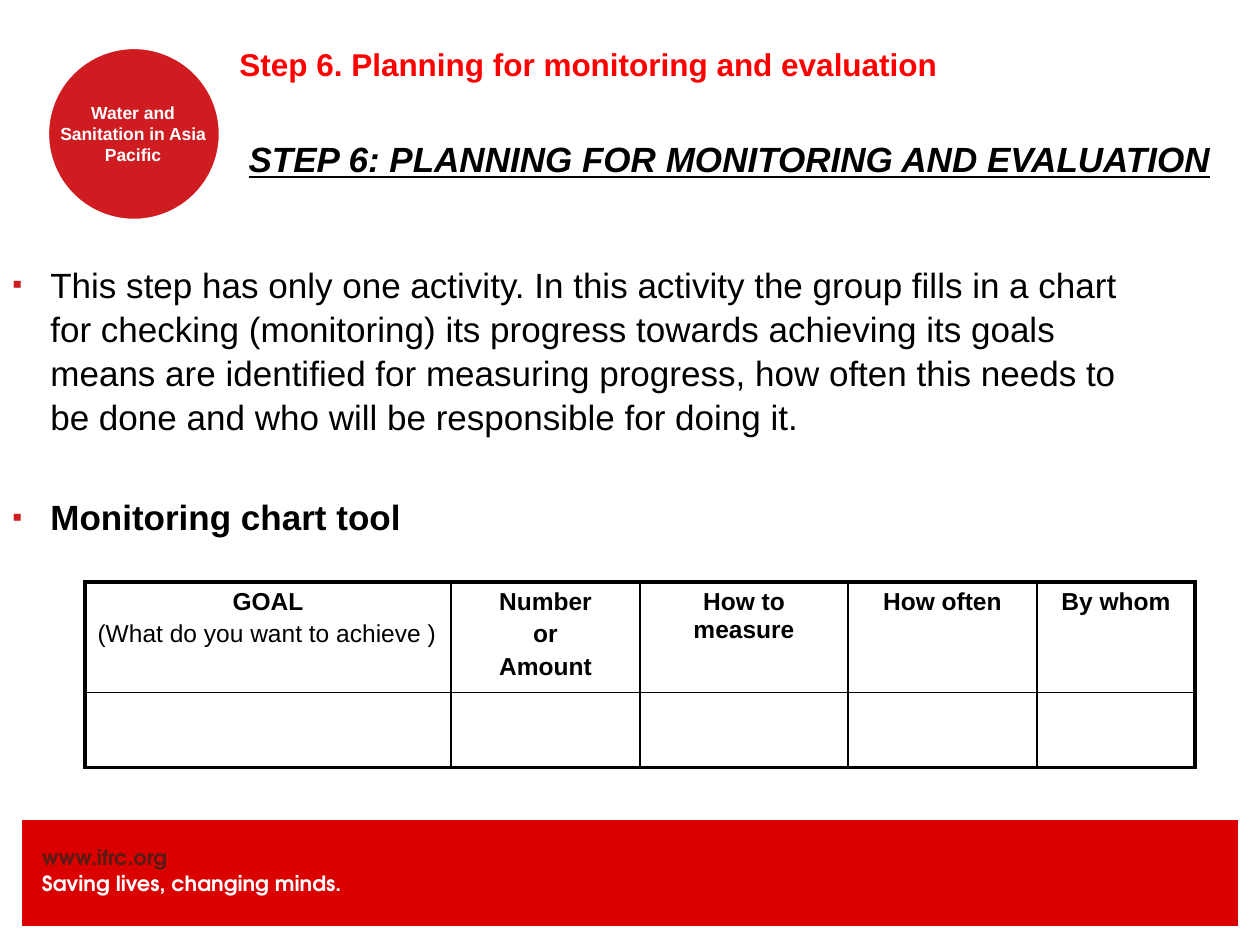
"""Builds the slide on planning for monitoring and evaluation."""
from lxml.etree import SubElement
from pptx import Presentation
from pptx.dml.color import RGBColor
from pptx.enum.shapes import MSO_SHAPE as SHAPE
from pptx.enum.text import MSO_ANCHOR as ANCHOR, MSO_AUTO_SIZE as AUTO, PP_ALIGN as ALIGN
from pptx.oxml.ns import qn
from pptx.util import Emu, Pt

SCALE = 914400 / 126
RED, DARK_RED, BROWN = "DB0000", "CF1C21", "551C15"
BRIGHT_RED, BLACK, WHITE = "FF0000", "000000", "FFFFFF"
FOOTER_FONT = "TeX Gyre Adventor"

TITLE = "STEP 6: PLANNING FOR MONITORING AND EVALUATION"
HEADING = "Step 6. Planning for monitoring and evaluation"
BADGE = "Water and Sanitation in Asia Pacific"
FOOTER = [("www.ifrc.org", BROWN), ("Saving lives, changing minds.", WHITE)]
BODY = [
    ("This step has only one activity. In this activity the group fills in a chart "
     "for checking (monitoring) its progress towards achieving its goals means are "
     "identified for measuring progress, how often this needs to be done and who "
     "will be responsible for doing it.", dict()),
    ("Monitoring chart tool", dict(bold=True, before=32)),
]
HEADERS = [
    ["GOAL", "(What do you want to achieve )"],
    ["Number", "or", "Amount"],
    ["How to measure"],
    ["How often"],
    ["By whom"],
]
COL_WIDTHS = [366, 189, 208, 189, 158]
ROW_HEIGHTS = [105, 75]


def px(n):
    return Emu(round(n * SCALE))


def rgb(color):
    return RGBColor.from_string(color)


def add_bullet(p):
    pPr = p._p.get_or_add_pPr()
    pPr.set("marL", str(px(38)))
    pPr.set("indent", str(px(-38)))
    SubElement(SubElement(pPr, qn("a:buClr")), qn("a:srgbClr"), val=DARK_RED)
    SubElement(pPr, qn("a:buSzPct"), val="80000")
    SubElement(pPr, qn("a:buFont"), typeface="Arial")
    SubElement(pPr, qn("a:buChar"), char="▪")


def write(tf, text, size=20, color=BLACK, font="Arial", bold=False, italic=False,
          underline=False, align=ALIGN.LEFT, before=0, spacing=None, bullet=False):
    p = tf.paragraphs[0]
    if p.runs:
        p = tf.add_paragraph()
        p.space_before = Pt(before)
    p.alignment = align
    if spacing:
        p.line_spacing = spacing
    if bullet:
        add_bullet(p)
    r = p.add_run()
    r.text = text
    f = r.font
    f.size, f.name, f.bold, f.italic, f.underline = Pt(size), font, bold, italic, underline
    f.color.rgb = rgb(color)


def add_text_box(s, box, margin=None):
    tf = s.shapes.add_textbox(*map(px, box)).text_frame
    tf.word_wrap = True
    if margin is not None:
        tf.margin_left = tf.margin_top = tf.margin_right = tf.margin_bottom = px(margin)
    return tf


def add_panel(s, kind, box, fill, line_width):
    sp = s.shapes.add_shape(kind, *map(px, box))
    sp.shadow.inherit = False
    sp.fill.solid()
    sp.fill.fore_color.rgb = rgb(fill)
    sp.line.color.rgb = rgb(WHITE)
    sp.line.width = Pt(line_width)


def set_borders(cell, outer):
    tcPr = cell._tc.get_or_add_tcPr()
    for side in "LRTB":
        width = 2.25 if side in outer else 1
        ln = SubElement(tcPr, qn("a:ln" + side), w=str(Pt(width)))
        SubElement(SubElement(ln, qn("a:solidFill")), qn("a:srgbClr"), val=BLACK)


def add_chart_table(s, left, top):
    n_rows, n_cols = len(ROW_HEIGHTS), len(COL_WIDTHS)
    table = s.shapes.add_table(n_rows, n_cols, px(left), px(top),
                               px(sum(COL_WIDTHS)), px(sum(ROW_HEIGHTS))).table
    table.first_row = table.horz_banding = False
    for column, width in zip(table.columns, COL_WIDTHS):
        column.width = px(width)
    for i, height in enumerate(ROW_HEIGHTS):
        table.rows[i].height = px(height)
        for j in range(n_cols):
            cell = table.cell(i, j)
            outer = ("T" * (i == 0) + "B" * (i == n_rows - 1)
                     + "L" * (j == 0) + "R" * (j == n_cols - 1))
            set_borders(cell, outer)
            cell.fill.background()
    for j, lines in enumerate(HEADERS):
        for line in lines:
            note = line.startswith("(")
            write(table.cell(0, j).text_frame, line, size=14, bold=not note, before=2.8,
                  align=ALIGN.LEFT if note else ALIGN.CENTER)


def main():
    prs = Presentation()
    prs.slide_width, prs.slide_height = px(1260), px(945)
    s = prs.slides.add_slide(prs.slide_layouts[5])

    title = s.shapes.title
    title.left, title.top, title.width, title.height = map(px, (236, 98, 1196, 91))
    tf = title.text_frame
    tf.auto_size = AUTO.NONE
    tf.vertical_anchor = ANCHOR.BOTTOM
    tf.margin_bottom = px(9)
    write(tf, TITLE, bold=True, italic=True, underline=True)

    add_panel(s, SHAPE.RECTANGLE, (21, 819, 1218, 108), RED, 0.75)
    tf = add_text_box(s, (42, 845, 431, 50), margin=0)
    for text, color in FOOTER:
        write(tf, text, size=12, color=color, font=FOOTER_FONT, bold=True)

    add_panel(s, SHAPE.OVAL, (47, 47, 174, 174), DARK_RED, 2.5)
    tf = add_text_box(s, (54, 102, 158, 64), margin=0)
    write(tf, BADGE, size=10, color=WHITE, bold=True, align=ALIGN.CENTER)

    tf = add_text_box(s, (0, 255, 1147, 199))
    for text, style in BODY:
        write(tf, text, spacing=1.05, bullet=True, **style)

    add_chart_table(s, 85, 582)
    write(add_text_box(s, (227, 39, 896, 50)), HEADING, size=18, color=BRIGHT_RED, bold=True)
    prs.save("out.pptx")


if __name__ == "__main__":
    main()
